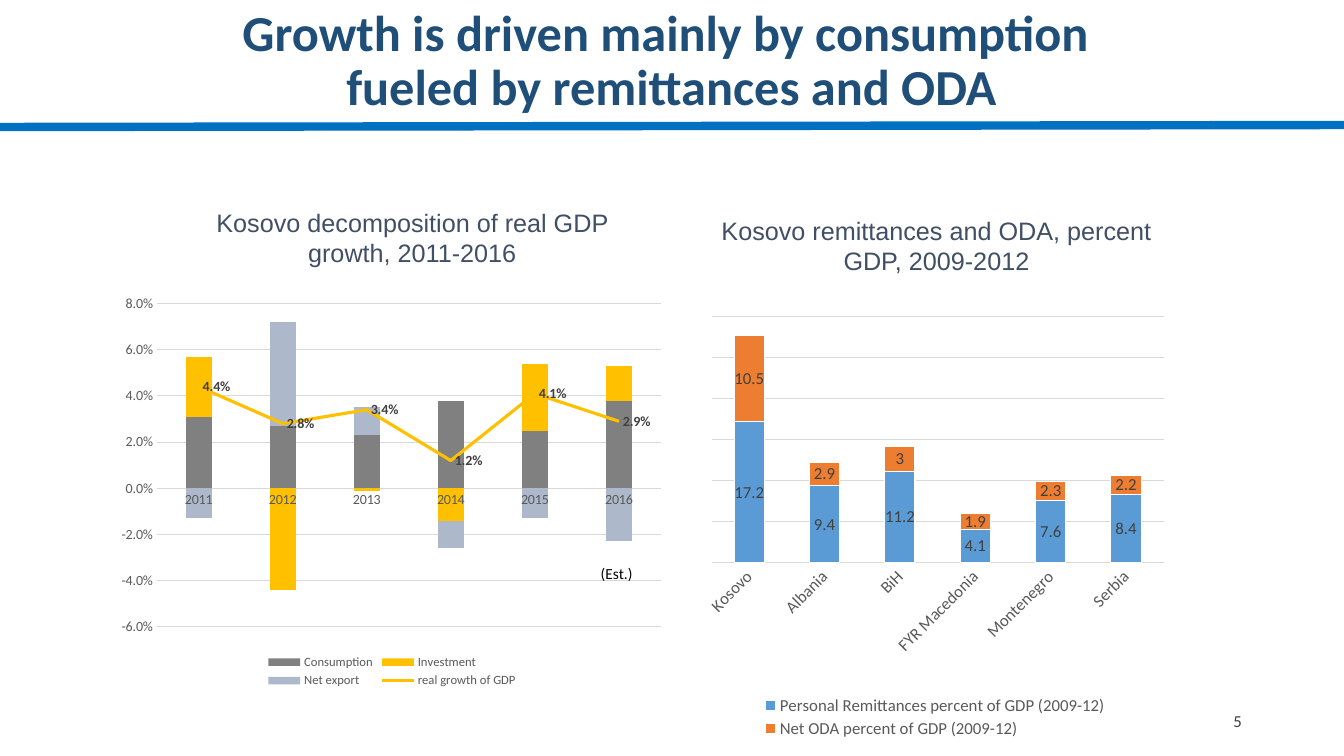
from lxml import etree
from pptx import Presentation
from pptx.chart.data import CategoryChartData
from pptx.dml.color import RGBColor
from pptx.enum.chart import (XL_CHART_TYPE, XL_LABEL_POSITION, XL_LEGEND_POSITION,
                             XL_MARKER_STYLE, XL_TICK_MARK)
from pptx.enum.shapes import MSO_CONNECTOR
from pptx.enum.text import MSO_ANCHOR, MSO_AUTO_SIZE, PP_ALIGN
from pptx.oxml import parse_xml
from pptx.oxml.ns import nsdecls, qn
from pptx.util import Cm, Pt

STACKED = XL_CHART_TYPE.COLUMN_STACKED
LABEL_CENTER, LABEL_RIGHT = XL_LABEL_POSITION.CENTER, XL_LABEL_POSITION.RIGHT
LEGEND_BOTTOM = XL_LEGEND_POSITION.BOTTOM
NO_MARKER, NO_TICK = XL_MARKER_STYLE.NONE, XL_TICK_MARK.NONE
LEFT, CENTER, RIGHT = PP_ALIGN.LEFT, PP_ALIGN.CENTER, PP_ALIGN.RIGHT
MIDDLE, TOP = MSO_ANCHOR.MIDDLE, MSO_ANCHOR.TOP
TITLE_ONLY = 5
NAVY, BLUE, SLATE = "1F4E79", "0070C0", "404F64"
BLACK, DARK, GREY, PALE, WHITE = "000000", "404040", "595959", "D9D9D9", "FFFFFF"
GOLD = "FFC000"


def rgb(value):
    return RGBColor.from_string(value)


def style_font(font, size, color, bold=None, name="Calibri"):
    font.name, font.size, font.bold = name, Pt(size), bold
    font.color.rgb = rgb(color)


def style_line(line, color, width=0.75):
    line.color.rgb = rgb(color)
    line.width = Pt(width)


def set_layout(parent, index, x, y, w, h, inner=False):
    """Fix the place of a plot area or legend, in fractions of the chart."""
    for old in parent.findall(qn("c:layout")):
        parent.remove(old)
    target = '<c:layoutTarget val="inner"/>' if inner else ""
    parent.insert(index, parse_xml(
        f'<c:layout {nsdecls("c")}><c:manualLayout>{target}'
        '<c:xMode val="edge"/><c:yMode val="edge"/>'
        f'<c:x val="{x}"/><c:y val="{y}"/><c:w val="{w}"/><c:h val="{h}"/>'
        '</c:manualLayout></c:layout>'))


class Deck:
    def __init__(self):
        self.presentation = Presentation()
        self.presentation.slide_width = Cm(33.87)
        self.presentation.slide_height = Cm(19.05)
        layout = self.presentation.slide_layouts[TITLE_ONLY]
        self.slide = self.presentation.slides.add_slide(layout)
        self.shapes = self.slide.shapes

    def title(self, text, x, y, w, h):
        heading = self.shapes.title
        heading.left, heading.top, heading.width, heading.height = map(Cm, (x, y, w, h))
        frame = heading.text_frame
        frame.text = text
        frame.word_wrap = True
        frame.auto_size = MSO_AUTO_SIZE.NONE
        frame.vertical_anchor = MIDDLE
        for paragraph in frame.paragraphs:
            paragraph.alignment = CENTER
            paragraph.line_spacing = 0.9
            style_font(paragraph.runs[0].font, 36, NAVY, True)

    def text(self, text, x, y, w, h, size, color, align, anchor=TOP,
             name="Calibri", wrap=True):
        frame = self.shapes.add_textbox(Cm(x), Cm(y), Cm(w), Cm(h)).text_frame
        frame.text = text
        frame.word_wrap = wrap
        frame.vertical_anchor = anchor
        frame.paragraphs[0].alignment = align
        style_font(frame.paragraphs[0].runs[0].font, size, color, name=name)

    def rule(self, x1, y1, x2, y2):
        rule = self.shapes.add_connector(
            MSO_CONNECTOR.STRAIGHT, Cm(x1), Cm(y1), Cm(x2), Cm(y2))
        style_line(rule.line, BLUE, 6)
        etree.SubElement(rule._element.spPr, qn("a:effectLst"))

    def stacked_chart(self, place, categories, series, scale, size, legend_size,
                      gap, plot_layout, legend_layout, number_format="General"):
        """Add a stacked column chart; series holds (name, colour, values)."""
        data = CategoryChartData(number_format=number_format)
        data.categories = categories
        for name, _, values in series:
            data.add_series(name, values)
        chart = self.shapes.add_chart(STACKED, *map(Cm, place), data).chart
        chart.has_title = False
        style_font(chart.font, size, BLACK)

        columns = chart.plots[0]
        columns.gap_width, columns.overlap = gap, 100
        columns.vary_by_categories = False
        for column, (_, color, _) in zip(columns.series, series):
            column.format.fill.solid()
            column.format.fill.fore_color.rgb = rgb(color)

        for axis in (chart.category_axis, chart.value_axis):
            axis.major_tick_mark = axis.minor_tick_mark = NO_TICK
            style_font(axis.tick_labels.font, size, GREY)
        style_line(chart.category_axis.format.line, PALE)
        values_axis = chart.value_axis
        values_axis.minimum_scale, values_axis.maximum_scale, values_axis.major_unit = scale
        values_axis.format.line.fill.background()
        values_axis.tick_labels.number_format = number_format
        values_axis.tick_labels.number_format_is_linked = False
        values_axis.has_major_gridlines = True
        style_line(values_axis.major_gridlines.format.line, PALE)

        chart.has_legend = True
        chart.legend.position = LEGEND_BOTTOM
        chart.legend.include_in_layout = False
        style_font(chart.legend.font, legend_size, GREY)
        set_layout(chart.legend._element, 1, *legend_layout)
        set_layout(chart._chartSpace.chart.plotArea, 0, *plot_layout, inner=True)
        return chart

    def label_values(self, plot, size, position, number_format, bold=None):
        plot.has_data_labels = True
        labels = plot.data_labels
        labels.show_value = True
        labels.position = position
        labels.number_format = number_format
        labels.number_format_is_linked = False
        style_font(labels.font, size, DARK, bold)

    def last_series_as_line(self, chart, color):
        """Turn the last column series into a line on the same axes."""
        columns = chart._chartSpace.chart.plotArea.find(qn("c:barChart"))
        moved = columns.findall(qn("c:ser"))[-1]
        for tag in ("c:invertIfNegative", "c:spPr"):
            for child in moved.findall(qn(tag)):
                moved.remove(child)
        axes = "".join(f'<c:axId val="{axis.get("val")}"/>'
                       for axis in columns.findall(qn("c:axId")))
        line_chart = parse_xml(
            f'<c:lineChart {nsdecls("c")}><c:grouping val="standard"/>'
            f'<c:varyColors val="0"/><c:marker val="1"/>{axes}</c:lineChart>')
        line_chart.insert(2, moved)
        columns.addnext(line_chart)
        plot = chart.plots[1]
        growth = plot.series[0]
        growth.smooth = False
        growth.marker.style = NO_MARKER
        style_line(growth.format.line, color, 2.25)
        return plot


def main():
    deck = Deck()
    deck.title("Growth is driven mainly by consumption \nfueled by remittances and ODA",
               -0.64, 0.25, 35.13, 2.64)
    deck.rule(0, 3.2, 33.87, 3.15)
    for heading, x, y in (
            ("Kosovo decomposition of real GDP growth, 2011-2016", 4.65, 5.1),
            ("Kosovo remittances and ODA, percent GDP, 2009-2012", 17.86, 5.3)):
        deck.text(heading, x, y, 11.48, 1.8, 18, SLATE, CENTER, name="Arial")

    aid = deck.stacked_chart(
        (17.58, 7.42, 11.76, 11.28),
        ["Kosovo", "Albania", "BiH", "FYR Macedonia", "Montenegro", "Serbia"],
        [("Personal Remittances percent of GDP (2009-12)", "5B9BD5",
          (17.2, 9.4, 11.2, 4.1, 7.6, 8.4)),
         ("Net ODA percent of GDP (2009-12)", "ED7D31",
          (10.5, 2.9, 3, 1.9, 2.3, 2.2))],
        (0, 30, 5), 12, 12, 150, (0.03, 0.05, 0.97, 0.55), (0.13, 0.89, 0.76, 0.11))
    aid.value_axis.visible = False
    aid.category_axis._element.find(qn("c:txPr")).find(qn("a:bodyPr")).set("rot", "-2700000")
    for column in aid.plots[0].series:
        style_line(column.format.line, WHITE)
    deck.label_values(aid.plots[0], 12, LABEL_CENTER, "General")

    growth = deck.stacked_chart(
        (2.82, 7.24, 14.12, 10.19),
        ["2011", "2012", "2013", "2014", "2015", "2016"],
        [("Consumption", "808080", (0.031, 0.027, 0.023, 0.038, 0.025, 0.038)),
         ("Investment", GOLD, (0.026, -0.044, -0.001, -0.014, 0.029, 0.015)),
         ("Net export", "ADB9CA", (-0.013, 0.045, 0.012, -0.012, -0.013, -0.023)),
         ("real growth of GDP", GOLD, (0.044, 0.028, 0.034, 0.012, 0.041, 0.029))],
        (-0.06, 0.08, 0.02), 10, 9, 219, (0.08, 0.04, 0.9, 0.8),
        (0.27, 0.9, 0.46, 0.1), "0.0%")
    growth_line = deck.last_series_as_line(growth, GOLD)
    deck.label_values(growth_line, 10, LABEL_RIGHT, "0.0%", True)

    deck.text("(Est.)", 14.89, 14.1, 1.4, 0.74, 11, BLACK, LEFT, wrap=False)
    deck.text("5", 23.93, 17.65, 7.62, 1.02, 12, DARK, RIGHT, MIDDLE)
    deck.presentation.save("out.pptx")


if __name__ == "__main__":
    main()
